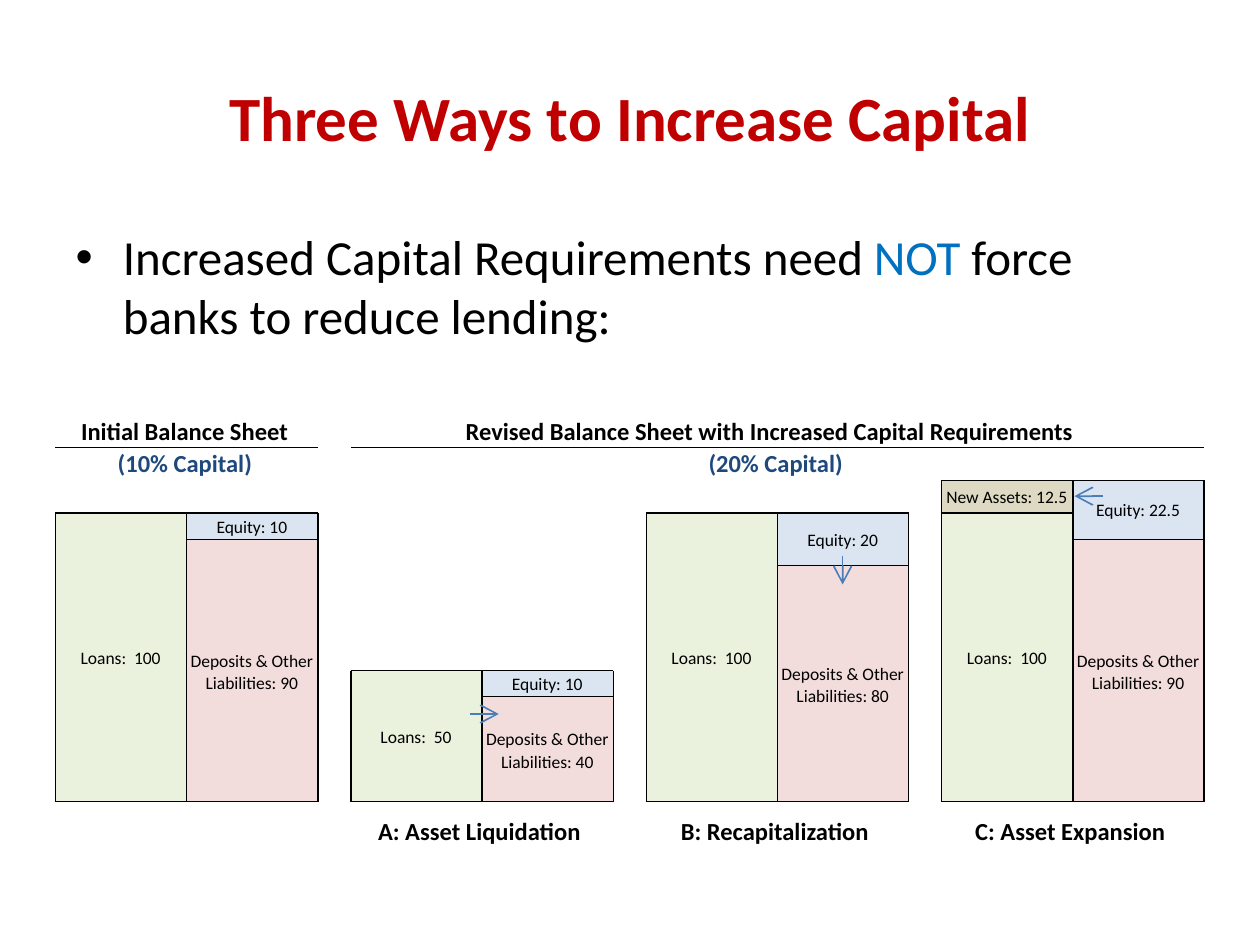
from lxml import etree
from pptx import Presentation
from pptx.dml.color import RGBColor
from pptx.enum.shapes import MSO_CONNECTOR, MSO_SHAPE
from pptx.enum.text import MSO_ANCHOR, PP_ALIGN
from pptx.oxml.ns import qn
from pptx.util import Pt

STRAIGHT = MSO_CONNECTOR.STRAIGHT
RECT = MSO_SHAPE.RECTANGLE
MIDDLE = MSO_ANCHOR.MIDDLE
CENTER = PP_ALIGN.CENTER

FONT = "Calibri"
BLACK, RED, BLUE, NAVY, ARROW = "000000", "C00000", "0070C0", "1F497D", "4A7EBB"
LOANS, NEW_ASSETS, EQUITY, DEPOSITS = "EAF1DD", "DDD9C3", "DBE5F1", "F2DDDC"

LEFT, PITCH, COLUMN = 31.7, 168.8, 75
BOTTOM, ROW = 458.2, 15
RULE_Y = 255.7
LABEL_LINE = 13

# Columns of each sheet, top to bottom: (label, fill, height in rows)
SHEETS = [
    ("", [("Loans:  100", LOANS, 11)],
     [("Equity: 10", EQUITY, 1),
      ("Deposits & Other\nLiabilities: 90", DEPOSITS, 10)]),
    ("A: Asset Liquidation", [("Loans:  50", LOANS, 5)],
     [("Equity: 10", EQUITY, 1),
      ("Deposits & Other\nLiabilities: 40", DEPOSITS, 4)]),
    ("B: Recapitalization", [("Loans:  100", LOANS, 11)],
     [("Equity: 20", EQUITY, 2),
      ("Deposits & Other\nLiabilities: 80", DEPOSITS, 9)]),
    ("C: Asset Expansion",
     [("New Assets: 12.5", NEW_ASSETS, 1.25), ("Loans:  100", LOANS, 11)],
     [("Equity: 22.5", EQUITY, 2.25),
      ("Deposits & Other\nLiabilities: 90", DEPOSITS, 10)]),
]

# Moves of funds: x and y of the start, then of the end
ARROWS = [
    (268.5, 408, 285, 408),
    (481.5, 317.5, 481.5, 334),
    (630.5, 283.5, 614, 283.5),
]


def rgb(color):
    return RGBColor.from_string(color)


def style_run(r, size, color, bold=False):
    r.font.name = FONT
    r.font.size = Pt(size)
    r.font.bold = bold
    r.font.color.rgb = rgb(color)


def place(s, left, top, width, height):
    s.left, s.top, s.width, s.height = Pt(left), Pt(top), Pt(width), Pt(height)


def add_title(slide, text):
    s = slide.shapes.title
    place(s, 36, 21.6, 648, 90)
    s.text_frame.text = text
    style_run(s.text_frame.paragraphs[0].runs[0], 36, RED, True)


def add_body(slide, parts):
    s = slide.placeholders[1]
    place(s, 36, 126, 648, 356.4)
    p = s.text_frame.paragraphs[0]
    for text, color in parts:
        r = p.add_run()
        r.text = text
        style_run(r, 28, color)


def add_text(slide, center, middle, width, height, text, size,
             color=BLACK, bold=False):
    """Centre unwrapped text on a point."""
    s = slide.shapes.add_textbox(Pt(center - width / 2),
                                 Pt(middle - height / 2), Pt(width), Pt(height))
    tf = s.text_frame
    tf.margin_left = tf.margin_right = tf.margin_top = tf.margin_bottom = 0
    tf.word_wrap = False
    tf.vertical_anchor = MIDDLE
    tf.text = text
    for p in tf.paragraphs:
        p.alignment = CENTER
        if len(tf.paragraphs) > 1:
            p.line_spacing = Pt(LABEL_LINE)
        for r in p.runs:
            style_run(r, size, color, bold)


def add_caption(slide, center, top, text, color=BLACK, width=117):
    add_text(slide, center, top + 8.5, width, 17, text, 14, color, True)


def add_line(slide, x1, y1, x2, y2, color=BLACK, weight=0.75):
    s = slide.shapes.add_connector(STRAIGHT, Pt(x1), Pt(y1), Pt(x2), Pt(y2))
    s.line.color.rgb = rgb(color)
    s.line.width = Pt(weight)
    etree.SubElement(s._element.spPr, qn("a:effectLst"))
    return s


def add_arrow(slide, x1, y1, x2, y2):
    s = add_line(slide, x1, y1, x2, y2, ARROW, 1)
    etree.SubElement(s.line._get_or_add_ln(), qn("a:tailEnd"),
                     type="arrow", w="lg", len="lg")


def add_stack(slide, left, boxes):
    """Stack labelled boxes up from the bottom line and return their top."""
    stack_top = top = BOTTOM - ROW * sum(rows for _, _, rows in boxes)
    for label, fill, rows in boxes:
        height = rows * ROW
        s = slide.shapes.add_shape(
            RECT, Pt(left), Pt(top), Pt(COLUMN), Pt(height))
        s.shadow.inherit = False
        s.fill.solid()
        s.fill.fore_color.rgb = rgb(fill)
        s.line.fill.background()
        if top > stack_top:
            add_line(slide, left, top, left + COLUMN, top)
        lines = label.count("\n") + 1
        add_text(slide, left + COLUMN / 2 - 0.3, top + height / 2,
                 COLUMN - 2, LABEL_LINE * lines, label, 10)
        top += height
    return stack_top


def add_sheet(slide, left, caption, assets, liabilities):
    middle, right = left + COLUMN, left + 2 * COLUMN
    top = add_stack(slide, left, assets)
    add_stack(slide, middle, liabilities)
    for y in (top, BOTTOM):
        add_line(slide, left, y, right, y)
    for x in (left, middle, right):
        add_line(slide, x, top, x, BOTTOM)
    if caption:
        add_caption(slide, middle - 1.5, 466, caption)


def add_header(slide, left, right, center, title, capital, width):
    add_caption(slide, center, 237.5, title, width=width)
    add_line(slide, left, RULE_Y, right, RULE_Y)
    add_caption(slide, (left + right) / 2 - 1, 256, capital, NAVY, 78)


def main():
    prs = Presentation()
    prs.slide_width, prs.slide_height = Pt(720), Pt(540)
    slide = prs.slides.add_slide(prs.slide_layouts[1])

    add_title(slide, "Three Ways to Increase Capital")
    add_body(slide, [("Increased Capital Requirements need ", BLACK),
                     ("NOT", BLUE),
                     (" force banks to reduce lending:", BLACK)])

    sheet_width = 2 * COLUMN
    add_header(slide, LEFT, LEFT + sheet_width, 105.5,
               "Initial Balance Sheet", "(10% Capital)", 120)
    add_header(slide, LEFT + PITCH, LEFT + 3 * PITCH + sheet_width, 439.7,
               "Revised Balance Sheet with Increased Capital Requirements",
               "(20% Capital)", 349)

    for i, sheet in enumerate(SHEETS):
        add_sheet(slide, LEFT + i * PITCH, *sheet)
    for ends in ARROWS:
        add_arrow(slide, *ends)

    prs.save("out.pptx")


if __name__ == "__main__":
    main()
